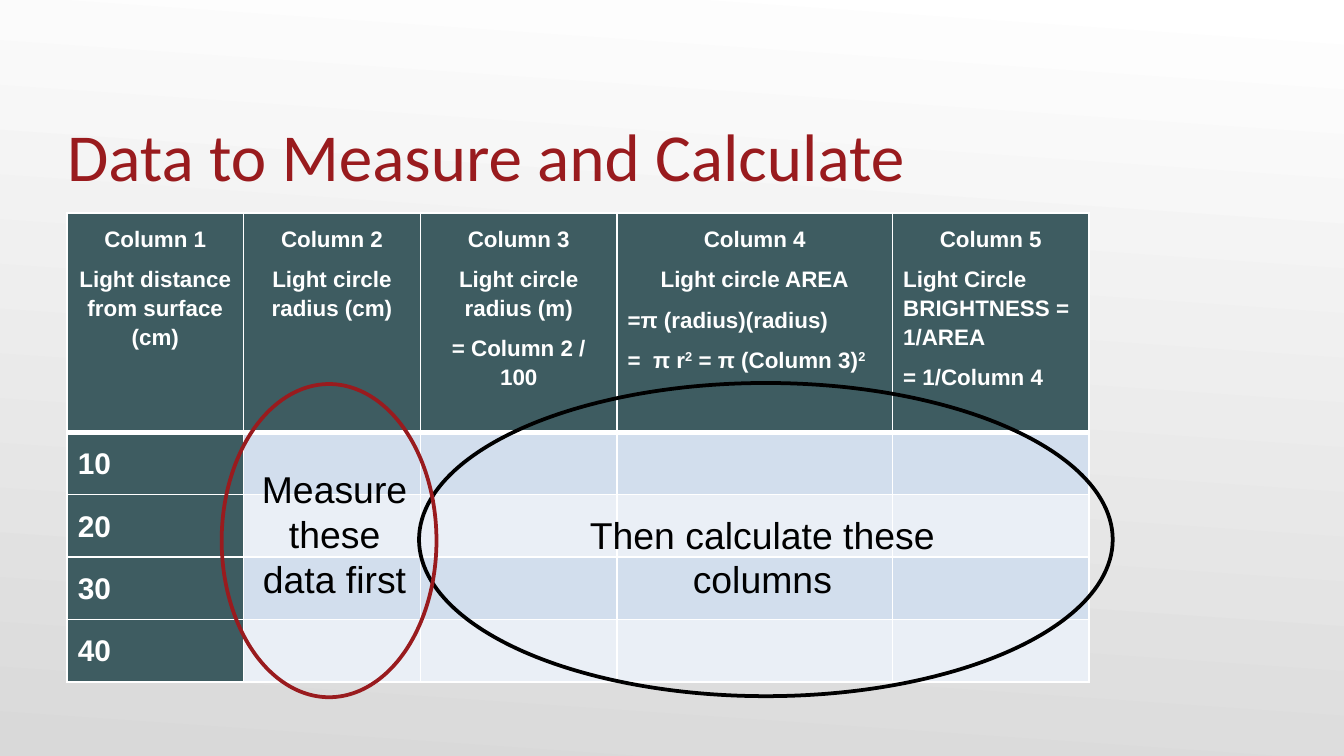
import pptx
import pptx.dml.color
import pptx.enum.shapes
import pptx.enum.text
import pptx.oxml
import pptx.util
from pptx.util import Cm

DARK_RED, TEAL, WHITE, BLACK = "991B1E", "3E5C61", "FFFFFF", "000000"
BANDS = ("D2DEED", "EAEFF6")
CENTER = pptx.enum.text.PP_ALIGN.CENTER
LEFT = pptx.enum.text.PP_ALIGN.LEFT
TOP = pptx.enum.text.MSO_ANCHOR.TOP
BOTTOM = pptx.enum.text.MSO_ANCHOR.BOTTOM
NAMESPACE = "http://schemas.openxmlformats.org/drawingml/2006/main"

COLUMN_WIDTHS = (3.33, 3.35, 3.71, 5.21, 3.71)
HEADER_HEIGHT, ROW_HEIGHT = 4.14, 1.12
DISTANCES = ("10", "20", "30", "40")
HEADERS = (
    (("Column 1", CENTER), ("Light distance from surface (cm)", CENTER)),
    (("Column 2", CENTER), ("Light circle radius (cm)", CENTER)),
    (("Column 3", CENTER), ("Light circle radius (m)", CENTER), ("= Column 2 / 100", CENTER)),
    (("Column 4", CENTER), ("Light circle AREA", CENTER), ("=π (radius)(radius)", LEFT),
     ("=  π r^2^ = π (Column 3)^2", LEFT)),
    (("Column 5", CENTER), ("Light Circle BRIGHTNESS = 1/AREA", LEFT), ("= 1/Column 4", LEFT)),
)


def color(value):
    return pptx.dml.color.RGBColor.from_string(value)


class DataSlide:
    """Hold the presentation style and add elements to the current slide."""

    def __init__(self, font="Arial"):
        self.font = font
        self.presentation = pptx.Presentation()
        self.presentation.slide_width = Cm(25.4)
        self.presentation.slide_height = Cm(14.29)
        self.slide = self.presentation.slides.add_slide(self.presentation.slide_layouts[6])

    def background(self, start, end, angle):
        fill = self.slide.background.fill
        fill.gradient()
        fill.gradient_angle = 360 - angle
        for stop, position, value in zip(fill.gradient_stops, (0, 1), (start, end)):
            stop.position = position
            stop.color.rgb = color(value)

    def format_runs(self, paragraph, size, value, bold=False, font=None):
        for run in paragraph.runs:
            run.font.name = font or self.font
            run.font.size = pptx.util.Pt(size)
            run.font.bold = bold
            run.font.color.rgb = color(value)

    def text(self, text, box, size, value, align=CENTER, anchor=TOP, font=None, side_inset=0.25):
        frame = self.slide.shapes.add_textbox(*map(Cm, box)).text_frame
        frame.word_wrap = True
        frame.vertical_anchor = anchor
        frame.margin_left = frame.margin_right = Cm(side_inset)
        if anchor == BOTTOM:
            frame.margin_bottom = 0
        frame.text = text
        paragraph = frame.paragraphs[0]
        paragraph.alignment = align
        self.format_runs(paragraph, size, value, font=font)

    def ellipse(self, box, value):
        kind = pptx.enum.shapes.MSO_SHAPE.OVAL
        shape = self.slide.shapes.add_shape(kind, *map(Cm, box))
        shape.shadow.inherit = False
        shape.fill.background()
        shape.line.color.rgb = color(value)
        shape.line.width = pptx.util.Pt(2)

    def cell(self, cell, paragraphs, fill, size, bottom_border=1):
        cell.fill.solid()
        cell.fill.fore_color.rgb = color(fill)
        self.borders(cell, bottom_border)
        if not paragraphs:
            return
        cell.margin_left = cell.margin_right = cell.margin_top = cell.margin_bottom = Cm(0.2)
        for index, (text, align) in enumerate(paragraphs):
            frame = cell.text_frame
            paragraph = frame.add_paragraph() if index else frame.paragraphs[0]
            paragraph.alignment = align
            paragraph.line_spacing = 1.15
            paragraph.space_after = pptx.util.Pt(6)
            for part, piece in enumerate(text.split("^")):
                run = paragraph.add_run()
                run.text = piece
                if part % 2:
                    run._r.get_or_add_rPr().set("baseline", "30000")
            self.format_runs(paragraph, size, WHITE, bold=True)

    def borders(self, cell, bottom):
        properties = cell._tc.get_or_add_tcPr()
        for index, (side, width) in enumerate(zip("LRTB", (1, 1, 1, bottom))):
            properties.insert(index, pptx.oxml.parse_xml(
                f'<a:ln{side} xmlns:a="{NAMESPACE}" w="{pptx.util.Pt(width)}"><a:solidFill>'
                f'<a:srgbClr val="{WHITE}"/></a:solidFill></a:ln{side}>'))

    def table(self, left, top):
        heights = [HEADER_HEIGHT] + [ROW_HEIGHT] * len(DISTANCES)
        table = self.slide.shapes.add_table(
            len(heights), len(COLUMN_WIDTHS), Cm(left), Cm(top),
            Cm(sum(COLUMN_WIDTHS)), Cm(sum(heights))).table
        table.first_row = table.horz_banding = False
        for column, width in zip(table.columns, COLUMN_WIDTHS):
            column.width = Cm(width)
        for row, height in zip(table.rows, heights):
            row.height = Cm(height)
        for index, header in enumerate(HEADERS):
            self.cell(table.cell(0, index), header, TEAL, 12, bottom_border=3)
        for row, distance in enumerate(DISTANCES, 1):
            self.cell(table.cell(row, 0), [(distance, LEFT)], TEAL, 16)
            for column in range(1, len(COLUMN_WIDTHS)):
                self.cell(table.cell(row, column), [], BANDS[(row - 1) % 2], 16)


def main():
    page = DataSlide()
    page.background(WHITE, "D9D9D9", 94)
    page.text("Data to Measure and Calculate", (1.27, 1.3, 22.86, 2.39), 36, DARK_RED,
              LEFT, BOTTOM, "Calibri", 0)
    page.table(1.27, 4.03)
    page.ellipse((7.92, 7.24, 13.11, 5.92), BLACK)
    page.text("Then calculate these columns", (9.7, 9.55, 9.42, 1.96), 20, BLACK)
    page.ellipse((4.19, 7.26, 4.06, 5.92), DARK_RED)
    page.text("Measure these data first", (4.67, 8.69, 3.31, 2.82), 20, BLACK)
    page.presentation.save("out.pptx")


if __name__ == "__main__":
    main()
